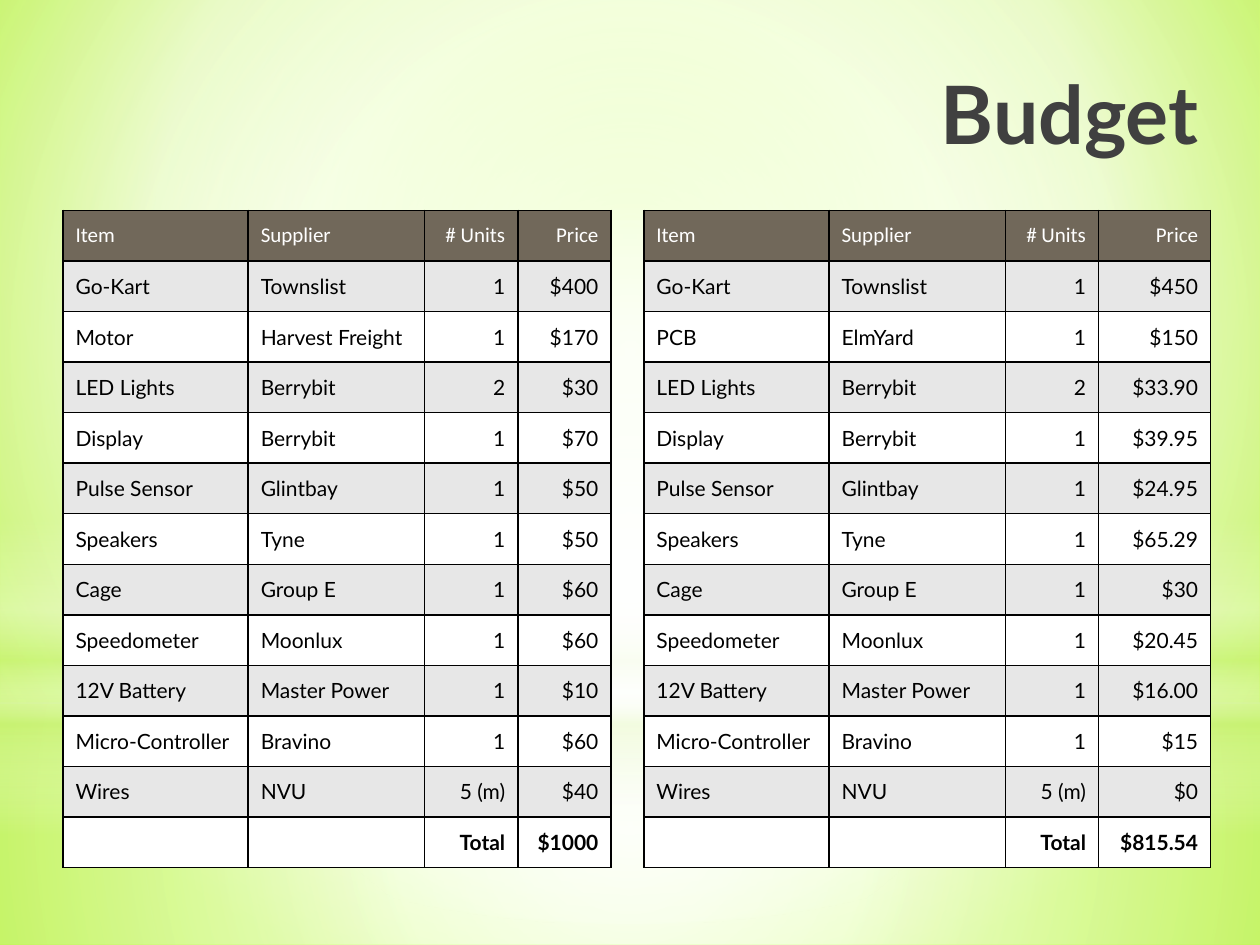
from lxml import etree
from pptx import Presentation
from pptx.dml.color import RGBColor
from pptx.enum.shapes import MSO_SHAPE
from pptx.enum.text import MSO_ANCHOR, MSO_AUTO_SIZE, PP_ALIGN
from pptx.oxml.ns import qn
from pptx.util import Inches, Pt

COLORS = {
    "title": "404040", "header": "71685A", "band": "E7E7E7",
    "white": "FFFFFF", "black": "000000", "lime": "CAF278",
    "bg_in": "CAFF60", "bg_mid": "F7FFE7", "bg_out": "B7FF29",
}


def rgb(name):
    return RGBColor.from_string(COLORS[name])


def set_gradient(parent, stops, focus=None):
    grad = etree.Element(qn("a:gradFill"), rotWithShape="1")
    gs_list = etree.SubElement(grad, qn("a:gsLst"))
    for pos, color, alpha in stops:
        gs = etree.SubElement(gs_list, qn("a:gs"), pos=str(pos * 1000))
        clr = etree.SubElement(gs, qn("a:srgbClr"), val=COLORS[color])
        if alpha < 100:
            etree.SubElement(clr, qn("a:alpha"), val=str(alpha * 1000))
    if focus:
        path = etree.SubElement(grad, qn("a:path"), path="circle")
        sides = {side: str(v * 1000) for side, v in zip("ltrb", focus)}
        etree.SubElement(path, qn("a:fillToRect"), **sides)
    else:
        etree.SubElement(grad, qn("a:lin"), ang="5400000", scaled="0")
    parent.replace(parent.find(qn("a:solidFill")), grad)


prs = Presentation()
prs.slide_width, prs.slide_height = Inches(10), Inches(7.5)
s = prs.slides.add_slide(prs.slide_layouts[5])

s.background.fill.solid()
set_gradient(s.element.find(".//" + qn("p:bgPr")),
             [(0, "bg_in", 100), (60, "bg_mid", 100), (100, "bg_out", 100)],
             (20, 10, 20, 60))

title = s.shapes.title
center = (50, 50, 50, 50)
glows = [
    (MSO_SHAPE.RECTANGLE, 5.58, 1.92, center,
     [(0, "white", 91), (37, "white", 76), (100, "lime", 79)]),
    (MSO_SHAPE.RECTANGLE, 0, 5.58, center,
     [(0, "white", 89), (48, "white", 62), (100, "lime", 79)]),
    (MSO_SHAPE.RECTANGLE, 4.12, 2.5, None,
     [(0, "white", 0), (29, "white", 30), (45, "lime", 40),
      (55, "white", 26), (65, "lime", 60), (100, "white", 0)]),
    (MSO_SHAPE.OVAL, 1.75, 5.58, center,
     [(0, "white", 100), (56, "white", 0)]),
]
for kind, top, height, focus, stops in glows:
    sp = s.shapes.add_shape(kind, 0, Inches(top), Inches(10), Inches(height))
    sp.shadow.inherit = False
    sp.line.fill.background()
    sp.fill.solid()
    set_gradient(sp.element.spPr, stops, focus)
    title.element.addprevious(sp.element)

title.left, title.top = Inches(3.08), Inches(0.42)
title.width, title.height = Inches(6.53), Inches(0.94)
tf = title.text_frame
tf.auto_size = MSO_AUTO_SIZE.NONE
tf.vertical_anchor = MSO_ANCHOR.MIDDLE
p = tf.paragraphs[0]
p.alignment = PP_ALIGN.RIGHT
r = p.add_run()
r.text = "Budget"
r.font.name, r.font.size, r.font.bold = "Lato", Pt(46), True
r.font.color.rgb = rgb("title")

header = ("Item", "Supplier", "# Units", "Price")
go_kart = ("Go-Kart", "Townslist", "1")
motor = ("Motor", "Harvest Freight", "1")
pcb = ("PCB", "ElmYard", "1")
shared = [
    ("LED Lights", "Berrybit", "2"),
    ("Display", "Berrybit", "1"),
    ("Pulse Sensor", "Glintbay", "1"),
    ("Speakers", "Tyne", "1"),
    ("Cage", "Group E", "1"),
    ("Speedometer", "Moonlux", "1"),
    ("12V Battery", "Master Power", "1"),
    ("Micro-Controller", "Bravino", "1"),
    ("Wires", "NVU", "5 (m)"),
    ("", "", "Total"),
]
planned = ["$400", "$170", "$30", "$70", "$50", "$50", "$60", "$60",
           "$10", "$60", "$40", "$1000"]
actual = ["$450", "$150", "$33.90", "$39.95", "$24.95", "$65.29", "$30",
          "$20.45", "$16.00", "$15", "$0", "$815.54"]
budgets = [(0.5, 0.74, motor, planned), (5.11, 0.89, pcb, actual)]

for left, price_width, second, prices in budgets:
    items = [go_kart, second] + shared
    rows = [header] + [item + (price,) for item, price in zip(items, prices)]
    widths = [1.47, 1.4, 0.74, price_width]
    table = s.shapes.add_table(len(rows), len(widths), Inches(left), Inches(1.67),
                               Inches(sum(widths)), Inches(5.22)).table
    table.first_row = table.horz_banding = False
    for col, width in zip(table.columns, widths):
        col.width = Inches(width)
    for i, row in enumerate(rows):
        table.rows[i].height = Inches(5.22 / len(rows))
        fill = "header" if i == 0 else "band" if i % 2 else "white"
        for j, text in enumerate(row):
            cell = table.cell(i, j)
            cell.vertical_anchor = MSO_ANCHOR.MIDDLE
            cell.margin_top = cell.margin_bottom = Inches(0.04)
            tc_pr = cell._tc.get_or_add_tcPr()
            for side in ("a:lnL", "a:lnR", "a:lnT", "a:lnB"):
                ln = etree.SubElement(tc_pr, qn(side), w=str(Pt(1)))
                line_fill = etree.SubElement(ln, qn("a:solidFill"))
                etree.SubElement(line_fill, qn("a:srgbClr"), val=COLORS["black"])
            cell.fill.solid()
            cell.fill.fore_color.rgb = rgb(fill)
            if not text:
                continue
            p = cell.text_frame.paragraphs[0]
            p.alignment = PP_ALIGN.RIGHT if j > 1 else PP_ALIGN.LEFT
            r = p.add_run()
            r.text = text
            r.font.size = Pt(12)
            r.font.name = "Lato" if i else "Calibri"
            r.font.bold = i == len(rows) - 1
            r.font.color.rgb = rgb("black" if i else "white")

prs.save("out.pptx")
